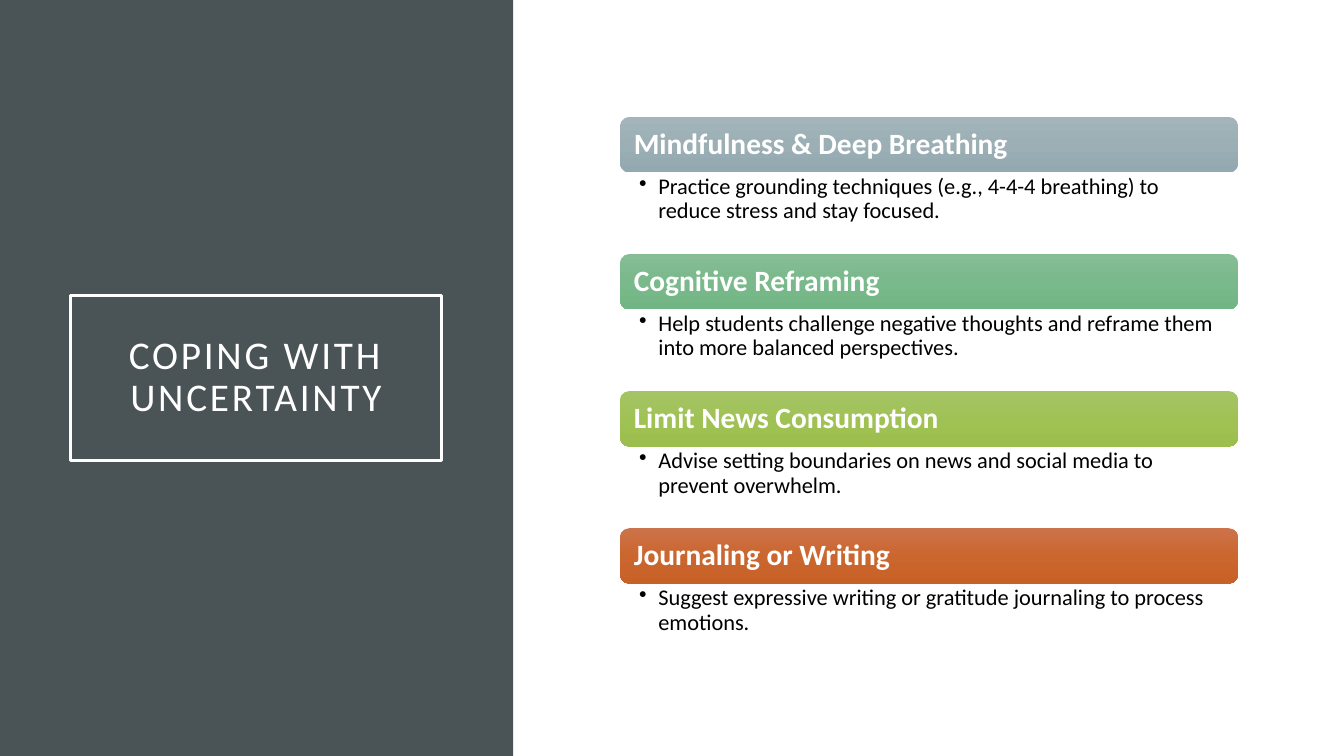
from copy import deepcopy

from pptx import Presentation
from pptx.dml.color import RGBColor
from pptx.enum.shapes import MSO_SHAPE as Preset
from pptx.enum.text import MSO_ANCHOR as Anchor, MSO_AUTO_SIZE as AutoSize, PP_ALIGN as Align
from pptx.oxml.ns import qn
from pptx.oxml.xmlchemy import OxmlElement
from pptx.util import Inches, Pt

FONT = "Calibri"
COLORS = {"panel": "4A5356", "white": "FFFFFF", "black": "000000"}

# Heading, advice, gradient from top to bottom
STRATEGIES = [
    ("Mindfulness & Deep Breathing",
     "Practice grounding techniques (e.g., 4-4-4 breathing) to reduce stress and stay focused.",
     ("A3B5BB", "9BAFB5", "93A9AF")),
    ("Cognitive Reframing",
     "Help students challenge negative thoughts and reframe them into more balanced perspectives.",
     ("86BD95", "7AB98B", "72B584")),
    ("Limit News Consumption",
     "Advise setting boundaries on news and social media to prevent overwhelm.",
     ("A5C466", "A0C255", "9BBE4D")),
    ("Journaling or Writing",
     "Suggest expressive writing or gratitude journaling to process emotions.",
     ("CC734B", "CB662F", "C86128")),
]
LIST_LEFT, LIST_TOP, LIST_WIDTH = 6.15, 1.16, 6.13
BAR_HEIGHT, ADVICE_HEIGHT, ROW_PITCH = 0.55, 0.81, 1.36


def rgb(name):
    return RGBColor.from_string(COLORS[name])


def write_text(shape, text, size, color, bold=False, align=Align.LEFT,
               anchor=Anchor.MIDDLE, insets=(0.1, 0.1, 0.1, 0.1), spacing=0):
    """Fill the shape with one paragraph and return it; spacing is in points."""
    frame = shape.text_frame
    frame.word_wrap = True
    frame.auto_size = AutoSize.NONE
    frame.vertical_anchor = anchor
    (frame.margin_left, frame.margin_top,
     frame.margin_right, frame.margin_bottom) = map(Inches, insets)
    paragraph = frame.paragraphs[0]
    paragraph.alignment = align
    paragraph.line_spacing = 0.9
    run = paragraph.add_run()
    run.text = text
    run.font.name = FONT
    run.font.size = Pt(size)
    run.font.bold = bold
    run.font.color.rgb = rgb(color)
    if spacing:
        run.font._element.set("spc", str(spacing * 100))
    return paragraph


def add_bullet(paragraph, indent):
    properties = paragraph._p.get_or_add_pPr()
    properties.set("marL", str(Inches(indent)))
    properties.set("indent", str(-Inches(indent)))
    bullet = OxmlElement("a:buChar")
    bullet.set("char", "•")
    properties.append(bullet)


def fill_gradient(shape, hexes):
    """Apply a three-stop gradient running from top to bottom."""
    shape.fill.gradient()
    shape.fill.gradient_angle = 270
    stop_list = shape.element.spPr.find(".//" + qn("a:gsLst"))
    stop_list.insert(1, deepcopy(stop_list[0]))
    for stop, position, color in zip(shape.fill.gradient_stops, (0, 0.5, 1), hexes):
        stop.position = position
        stop.color.rgb = RGBColor.from_string(color)


def add_block(slide, preset, left, top, width, height):
    block = slide.shapes.add_shape(
        preset, Inches(left), Inches(top), Inches(width), Inches(height))
    block.shadow.inherit = False
    block.line.fill.background()
    return block


def add_side_panel(slide):
    panel = add_block(slide, Preset.RECTANGLE, 0, 0, 5.09, 7.5)
    panel.fill.solid()
    panel.fill.fore_color.rgb = rgb("panel")
    # Behind the title placeholder
    slide.shapes._spTree.insert(2, panel.element)


def set_title(slide, text):
    title = slide.shapes.title
    title.left, title.top = Inches(0.7), Inches(2.93)
    title.width, title.height = Inches(3.68), Inches(1.64)
    title.line.color.rgb = rgb("white")
    title.line.width = Pt(2.5)
    write_text(title, text, 28, "white", align=Align.CENTER,
               insets=(0.2, 0.2, 0.2, 0.2), spacing=2)


def add_strategy(slide, top, heading, advice, gradient):
    bar = add_block(slide, Preset.ROUNDED_RECTANGLE, LIST_LEFT, top, LIST_WIDTH, BAR_HEIGHT)
    fill_gradient(bar, gradient)
    write_text(bar, heading, 21, "white", bold=True, insets=(0.11, 0.09, 0.11, 0.09))

    advice_box = slide.shapes.add_textbox(
        Inches(LIST_LEFT), Inches(top + BAR_HEIGHT), Inches(LIST_WIDTH), Inches(ADVICE_HEIGHT))
    paragraph = write_text(advice_box, advice, 16, "black", anchor=Anchor.TOP,
                           insets=(0.19, 0.03, 0.16, 0.03))
    add_bullet(paragraph, 0.19)


def main():
    deck = Presentation()
    deck.slide_width, deck.slide_height = Inches(13.33), Inches(7.5)
    slide = deck.slides.add_slide(deck.slide_layouts[5])
    add_side_panel(slide)
    set_title(slide, "COPING WITH UNCERTAINTY")
    for row, strategy in enumerate(STRATEGIES):
        add_strategy(slide, LIST_TOP + row * ROW_PITCH, *strategy)
    deck.save("out.pptx")


if __name__ == "__main__":
    main()
